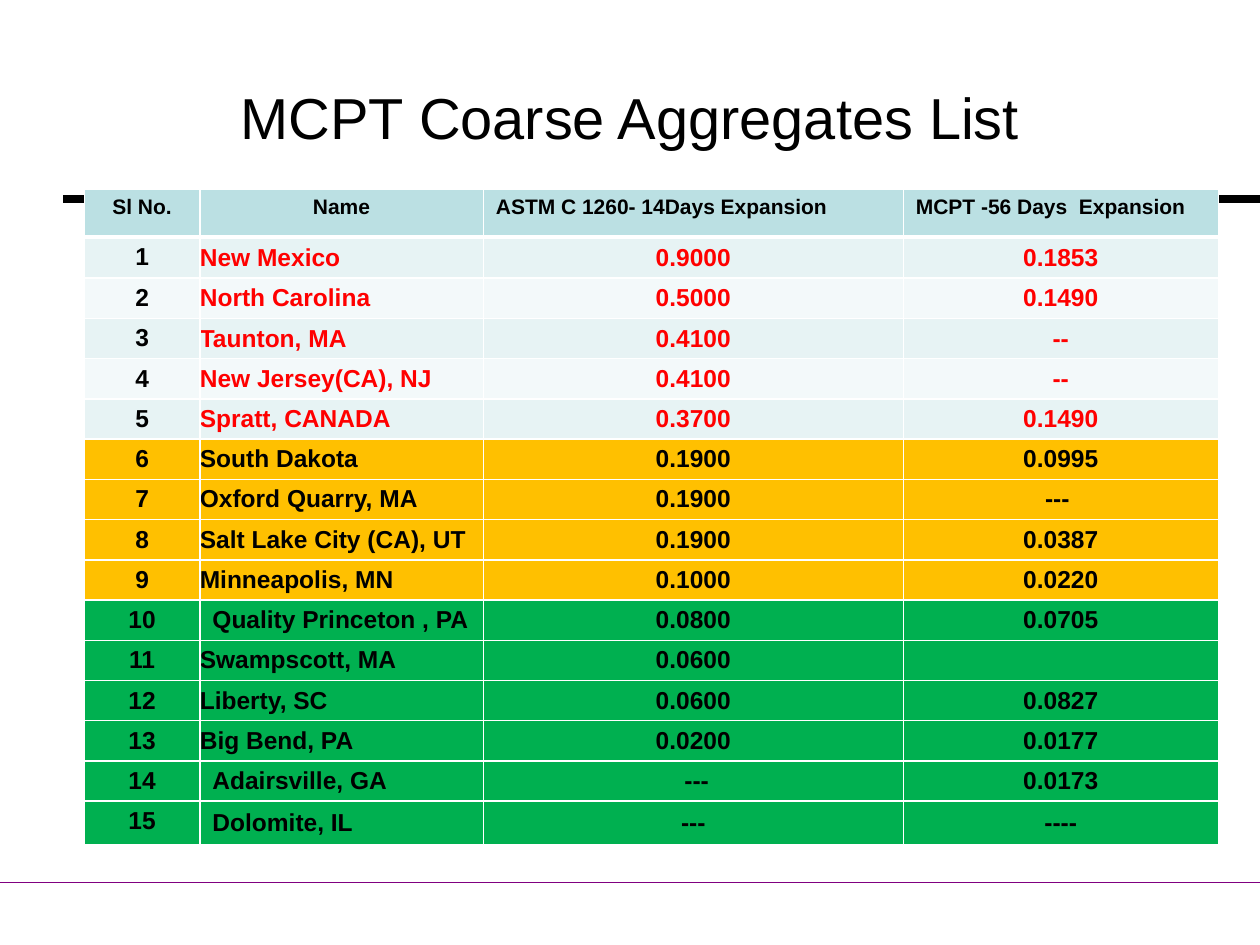
from lxml import etree
from pptx import Presentation
from pptx import util as u
from pptx.dml.color import RGBColor
from pptx.enum import shapes, text
from pptx.oxml.ns import qn

FONT = "Arial"
BLACK, WHITE, RED, PURPLE = "000000", "FFFFFF", "FF0000", "800080"
TEAL, PALE, PALER, AMBER, GREEN = "BBE0E3", "E7F3F4", "F3F9FA", "FFC000", "00B050"

HEADERS = ["Sl No.", "Name", "ASTM C 1260- 14Days Expansion", "MCPT -56 Days  Expansion"]
AGGREGATES = [
    ("New Mexico", "0.9000", "0.1853"),
    ("North Carolina", "0.5000", "0.1490"),
    ("Taunton, MA", "0.4100", "--"),
    ("New Jersey(CA), NJ", "0.4100", "--"),
    ("Spratt, CANADA", "0.3700", "0.1490"),
    ("South Dakota", "0.1900", "0.0995"),
    ("Oxford Quarry, MA", "0.1900", "--- "),
    ("Salt Lake City (CA), UT", "0.1900", "0.0387"),
    ("Minneapolis, MN", "0.1000", "0.0220"),
    ("Quality Princeton , PA", "0.0800", "0.0705"),
    ("Swampscott, MA", "0.0600", ""),
    ("Liberty, SC", "0.0600", "0.0827"),
    ("Big Bend, PA", "0.0200", "0.0177"),
    ("Adairsville, GA", " ---", "0.0173"),
    ("Dolomite, IL", "---", "----"),
]
INDENTED_ROWS = (10, 14, 15)
COLUMN_WIDTHS = [66, 162, 240, 180]
ROW_HEIGHTS = [27.4, 23.6] + [23] * 13 + [25]


def rgb(value):
    """Return the colour for a hex string."""
    return RGBColor.from_string(value)


def format_paragraph(p, size, color=BLACK, bold=False, centered=True):
    """Set the alignment and font of a paragraph."""
    p.alignment = text.PP_ALIGN.CENTER if centered else text.PP_ALIGN.LEFT
    p.font.name, p.font.size, p.font.bold = FONT, u.Pt(size), bold
    p.font.color.rgb = rgb(color)


def add_rule(slide, left, top, color, weight):
    """Draw a horizontal line to the right edge of the slide."""
    line = slide.shapes.add_connector(
        shapes.MSO_CONNECTOR.STRAIGHT, u.Pt(left), u.Pt(top), u.Pt(720), u.Pt(top))
    line.line.color.rgb, line.line.width = rgb(color), u.Pt(weight)
    etree.SubElement(line._element.spPr, qn("a:effectLst"))


def set_title(slide, wording):
    """Place and fill the title placeholder."""
    sp = slide.shapes.title
    sp.left, sp.top, sp.width, sp.height = u.Pt(36), u.Pt(21.6), u.Pt(648), u.Pt(90)
    tf = sp.text_frame
    tf.text = wording
    tf.vertical_anchor = text.MSO_ANCHOR.MIDDLE
    format_paragraph(tf.paragraphs[0], 33)


def set_borders(cell, bottom):
    """Give a cell white borders, with its own weight at the bottom."""
    tcPr = cell._tc.get_or_add_tcPr()
    for i, (side, weight) in enumerate([("L", 1), ("R", 1), ("T", 1), ("B", bottom)]):
        ln = etree.Element(qn(f"a:ln{side}"), w=str(u.Pt(weight)))
        fill = etree.SubElement(ln, qn("a:solidFill"))
        etree.SubElement(fill, qn("a:srgbClr"), val=WHITE)
        tcPr.insert(i, ln)


def fill_cell(cell, wording, fill, size, color=BLACK, centered=True, bottom=1):
    """Write and style one table cell."""
    cell.text = wording
    format_paragraph(cell.text_frame.paragraphs[0], size, color, True, centered)
    cell.fill.solid()
    cell.fill.fore_color.rgb = rgb(fill)
    set_borders(cell, bottom)


def row_fill(number):
    """Return the fill of a numbered row by its reactivity group."""
    if number > 9:
        return GREEN
    if number > 5:
        return AMBER
    return PALE if number % 2 else PALER


def add_aggregate_row(table, number, values):
    """Fill one numbered row of the table."""
    fill = row_fill(number)
    fill_cell(table.cell(number, 0), str(number), fill, 14)
    for column, value in enumerate(values, 1):
        cell = table.cell(number, column)
        cell.vertical_anchor = text.MSO_ANCHOR.MIDDLE
        if number not in INDENTED_ROWS:
            cell.margin_left = cell.margin_right = cell.margin_top = cell.margin_bottom = 0
        fill_cell(cell, value, fill, 14, RED if number < 6 else BLACK, column > 1)


def add_aggregate_table(slide):
    """Add the table of coarse aggregates."""
    table = slide.shapes.add_table(
        len(ROW_HEIGHTS), len(COLUMN_WIDTHS), u.Pt(48.2), u.Pt(108),
        u.Pt(sum(COLUMN_WIDTHS)), u.Pt(sum(ROW_HEIGHTS))).table
    table.horz_banding = False
    for column, width in zip(table.columns, COLUMN_WIDTHS):
        column.width = u.Pt(width)
    for row, height in zip(table.rows, ROW_HEIGHTS):
        row.height = u.Pt(height)
    for column, header in enumerate(HEADERS):
        fill_cell(table.cell(0, column), header, TEAL, 12, centered=column < 2, bottom=3)
    for number, values in enumerate(AGGREGATES, 1):
        add_aggregate_row(table, number, values)


def main():
    """Build the slide and save it."""
    prs = Presentation()
    prs.slide_width, prs.slide_height = u.Pt(720), u.Pt(540)
    slide = prs.slides.add_slide(prs.slide_layouts[5])
    add_rule(slide, 36, 113.8, BLACK, 4.5)
    add_rule(slide, 0, 504, PURPLE, 0.25)
    set_title(slide, "MCPT Coarse Aggregates List")
    add_aggregate_table(slide)
    prs.save("out.pptx")


if __name__ == "__main__":
    main()
